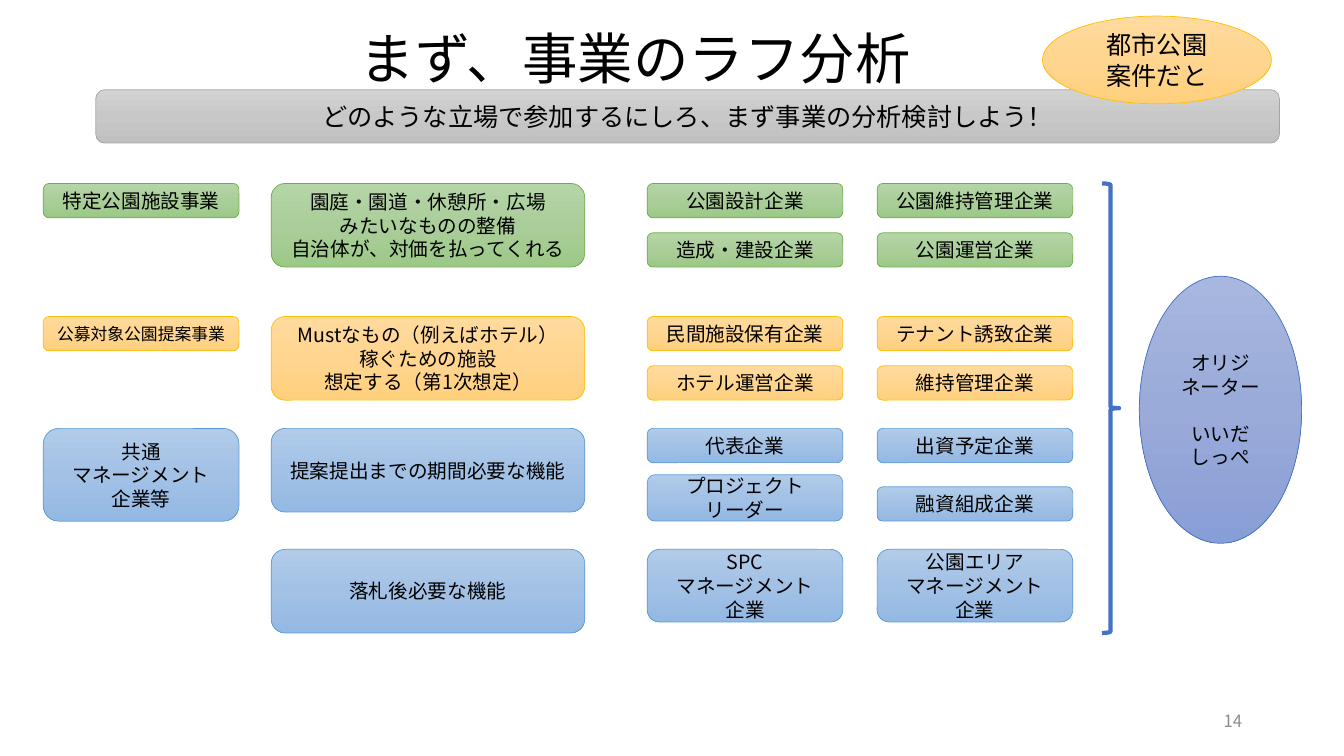
from copy import deepcopy
from collections import namedtuple

from pptx import Presentation
from pptx.dml.color import RGBColor
from pptx.enum.shapes import MSO_SHAPE
from pptx.enum.text import MSO_ANCHOR, PP_ALIGN
from pptx.oxml.ns import qn
from pptx.util import Inches, Pt

Box = namedtuple("Box", "left top width height")
Palette = namedtuple("Palette", "start middle end line")
Cell = namedtuple("Cell", "offset height lines size", defaults=(14,))


def palette(*codes):
    return Palette(*(RGBColor.from_string(code) for code in codes))


FONT = "Noto Sans CJK JP"
BLACK = RGBColor(0, 0, 0)
PAGE_GRAY = RGBColor(0x8C, 0x8C, 0x8C)
GRAY = palette("D2D2D2", "C8C8C8", "C0C0C0", "A5A5A5")
GREEN = palette("B5D5A7", "AACE9A", "9CC987", "70AD47")
YELLOW = palette("FFDB9E", "FFD590", "FFD07C", "FFC000")
BLUE = palette("B1CBE9", "A3C1E5", "93B9E4", "5B9BD5")
INDIGO = palette("A8B7DF", "9AABD9", "889ED7", "4472C4")

LABEL_WIDTH = 1.94
SCOPE_LEFT, SCOPE_WIDTH, SCOPE_HEIGHT = 2.26, 3.11, 0.83
COMPANY_LEFT, COMPANY_STEP = 5.99, 2.28
LOW = 0.34
SECOND_ROW = 0.49


def inches(box):
    return [Inches(length) for length in box]


def write_lines(frame, lines, size, align, color=BLACK, line_spacing=None, gap=0):
    frame.word_wrap = True
    frame.vertical_anchor = MSO_ANCHOR.MIDDLE
    for index, line in enumerate(lines):
        paragraph = frame.paragraphs[0] if index == 0 else frame.add_paragraph()
        paragraph.alignment = align
        paragraph.line_spacing = line_spacing or Pt(size * 1.2)
        if index:
            paragraph.space_before = Pt(gap)
        run = paragraph.add_run()
        run.text = line
        run.font.size = Pt(size)
        run.font.name = FONT
        run.font.color.rgb = color
        properties = run.font._element
        east_asian = properties.makeelement(qn("a:ea"), {"typeface": FONT})
        properties.find(qn("a:latin")).addnext(east_asian)


def fill_gradient(shape, colors):
    shape.fill.gradient()
    shape.fill.gradient_angle = 270
    stop_list = shape._element.spPr.find(qn("a:gradFill")).find(qn("a:gsLst"))
    stop_list.insert(1, deepcopy(stop_list[0]))
    stops = shape.fill.gradient_stops
    for stop, position, color in zip(stops, (0, 0.5, 1), colors[:3]):
        stop.position = position
        stop.color.rgb = color


def add_panel(slide, kind, box, colors, lines, size=14, gap=0):
    shape = slide.shapes.add_shape(kind, *inches(box))
    shape.shadow.inherit = False
    fill_gradient(shape, colors)
    shape.line.color.rgb = colors.line
    shape.line.width = Pt(0.5)
    write_lines(shape.text_frame, lines, size, PP_ALIGN.CENTER, gap=gap)


def add_title(slide, box):
    text_box = slide.shapes.add_textbox(*inches(box))
    text_box.text_frame.margin_left = Inches(1.2)
    write_lines(text_box.text_frame, ["まず、事業のラフ分析"], 39.6,
                PP_ALIGN.LEFT, line_spacing=0.9)


def add_page_number(slide, box):
    text_box = slide.shapes.add_textbox(*inches(box))
    write_lines(text_box.text_frame, ["14"], 12, PP_ALIGN.RIGHT, PAGE_GRAY)


def add_business_band(slide, left, top, colors, label, scope, company_columns):
    def place(x, width, cell):
        box = Box(left + x, top + cell.offset, width, cell.height)
        add_panel(slide, MSO_SHAPE.ROUNDED_RECTANGLE, box, colors, cell.lines, cell.size)

    if label:
        place(0, LABEL_WIDTH, label)
    place(SCOPE_LEFT, SCOPE_WIDTH, Cell(0, SCOPE_HEIGHT, scope))
    for index, column in enumerate(company_columns):
        for cell in column:
            place(COMPANY_LEFT + index * COMPANY_STEP, LABEL_WIDTH, cell)


def company_pair(upper, lower):
    return [Cell(0, LOW, [upper]), Cell(SECOND_ROW, LOW, [lower])]


def add_originator(slide, box):
    brace_box = Box(box.left, box.top, 0.17, box.height)
    brace = slide.shapes.add_shape(MSO_SHAPE.RIGHT_BRACE, *inches(brace_box))
    brace.shadow.inherit = False
    brace.fill.background()
    brace.line.color.rgb = INDIGO.line
    brace.line.width = Pt(3)
    ellipse_box = Box(box.left + 0.37, box.top + 0.92, box.width - 0.37, 2.65)
    add_panel(slide, MSO_SHAPE.OVAL, ellipse_box, INDIGO,
              ["オリジネーター", "いいだしっぺ"], gap=16.8)


BANDS = [
    (1.82, GREEN, Cell(0, LOW, ["特定公園施設事業"]),
     ["園庭・園道・休憩所・広場", "みたいなものの整備", "自治体が、対価を払ってくれる"],
     [company_pair("公園設計企業", "造成・建設企業"),
      company_pair("公園維持管理企業", "公園運営企業")]),
    (3.14, YELLOW, Cell(0, LOW, ["公募対象公園提案事業"], 12),
     ["Mustなもの（例えばホテル）", "稼ぐための施設", "想定する（第1次想定）"],
     [company_pair("民間施設保有企業", "ホテル運営企業"),
      company_pair("テナント誘致企業", "維持管理企業")]),
    (4.25, BLUE, Cell(0, 0.92, ["共通", "マネージメント", "企業等"]),
     ["提案提出までの期間必要な機能"],
     [[Cell(0, LOW, ["代表企業"]), Cell(0.46, 0.46, ["プロジェクト", "リーダー"])],
      [Cell(0, LOW, ["出資予定企業"]), Cell(0.58, LOW, ["融資組成企業"])]]),
    (5.45, BLUE, None, ["落札後必要な機能"],
     [[Cell(0, 0.72, ["SPC", "マネージメント", "企業"])],
      [Cell(0, 0.72, ["公園エリア", "マネージメント", "企業"])]]),
]


def main():
    presentation = Presentation()
    presentation.slide_width = Inches(13.33)
    presentation.slide_height = Inches(7.5)
    slide = presentation.slides.add_slide(presentation.slide_layouts[6])
    add_title(slide, Box(2.37, 0.4, 10.05, 0.42))
    add_page_number(slide, Box(9.42, 6.95, 3, 0.4))
    add_panel(slide, MSO_SHAPE.ROUNDED_RECTANGLE, Box(0.95, 0.89, 11.74, 0.53), GRAY,
              ["どのような立場で参加するにしろ、まず事業の分析検討しよう！"], 18)
    for band in BANDS:
        add_business_band(slide, 0.43, *band)
    add_originator(slide, Box(10.93, 1.82, 1.98, 4.46))
    add_panel(slide, MSO_SHAPE.OVAL, Box(10.34, 0.16, 2.27, 0.87), YELLOW,
              ["都市公園", "案件だと"], 18)
    presentation.save("out.pptx")


if __name__ == "__main__":
    main()
